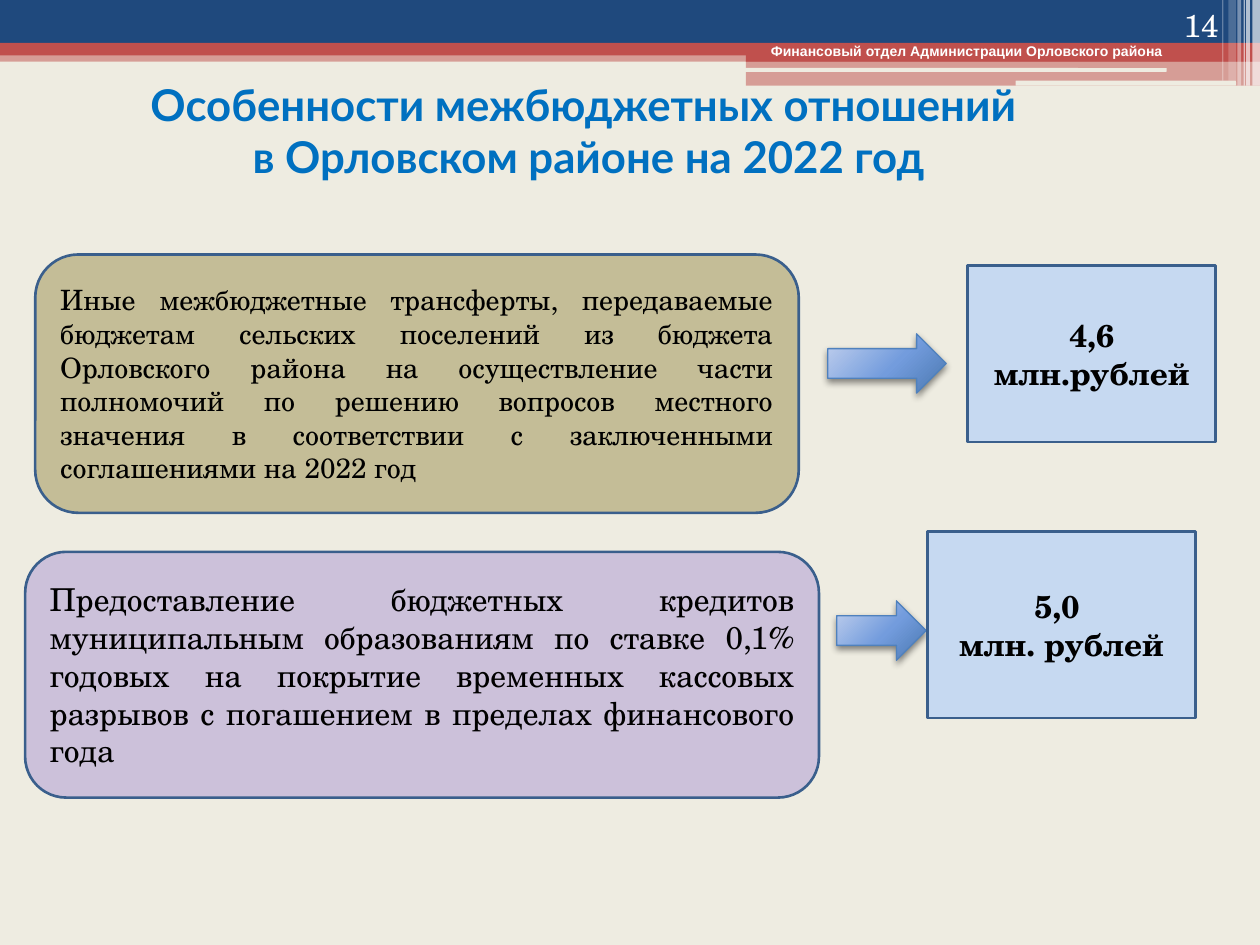
from lxml import etree
from pptx import Presentation
from pptx.dml.color import RGBColor
from pptx.enum.shapes import MSO_SHAPE
from pptx.enum.text import MSO_ANCHOR, MSO_AUTO_SIZE, PP_ALIGN
from pptx.oxml import parse_xml
from pptx.oxml.ns import nsdecls, qn
from pptx.util import Pt

PX = 9144  # 100 px to the inch
RECT, ROUND, ARROW = MSO_SHAPE.RECTANGLE, MSO_SHAPE.ROUNDED_RECTANGLE, MSO_SHAPE.RIGHT_ARROW
LEFT, CENTER, RIGHT, JUSTIFY = PP_ALIGN.LEFT, PP_ALIGN.CENTER, PP_ALIGN.RIGHT, PP_ALIGN.JUSTIFY
TOP, MIDDLE, BOTTOM = MSO_ANCHOR.TOP, MSO_ANCHOR.MIDDLE, MSO_ANCHOR.BOTTOM

CREAM = RGBColor(0xEE, 0xEC, 0xE1)
NAVY = RGBColor(0x1F, 0x49, 0x7D)
RED = RGBColor(0xC0, 0x50, 0x4D)
WHITE = RGBColor(0xFF, 0xFF, 0xFF)
BLACK = RGBColor(0, 0, 0)
TITLE_BLUE = RGBColor(0x00, 0x70, 0xC0)
PALE_BLUE = RGBColor(0xC6, 0xD9, 0xF1)
LILAC = RGBColor(0xCC, 0xC1, 0xDA)
KHAKI = RGBColor(0xC4, 0xBD, 0x97)
BORDER = RGBColor(0x3A, 0x5F, 0x8C)
ARROW_LINE = RGBColor(0x4F, 0x81, 0xBD)
SERIF = "TeX Gyre Schola"

GRADIENT = f"""<a:gradFill {nsdecls('a')} rotWithShape="1"><a:gsLst>
<a:gs pos="0"><a:srgbClr val="C4D2EE"/></a:gs>
<a:gs pos="55000"><a:srgbClr val="739CDD"/></a:gs>
<a:gs pos="100000"><a:srgbClr val="4A78B0"/></a:gs></a:gsLst>
<a:path path="circle"><a:fillToRect l="-40000" t="-90000" r="140000" b="190000"/></a:path>
</a:gradFill>"""
SHADOW = f"""<a:effectLst {nsdecls('a')}>
<a:outerShdw blurRad="50800" dist="25400" dir="5400000" rotWithShape="0">
<a:srgbClr val="000000"><a:alpha val="45000"/></a:srgbClr></a:outerShdw></a:effectLst>"""


def add_box(kind, box, fill, line=None, width=1.5, alpha=100):
    sp = s.shapes.add_shape(kind, *(v * PX for v in box))
    sp.shadow.inherit = False
    sp.fill.solid()
    sp.fill.fore_color.rgb = fill
    if alpha < 100:
        color = sp._element.spPr.find(".//" + qn("a:srgbClr"))
        etree.SubElement(color, qn("a:alpha")).set("val", str(alpha * 1000))
    if line is None:
        sp.line.fill.background()
    else:
        sp.line.color.rgb = line
        sp.line.width = Pt(width)
    return sp


def write(sp, text, size, color, align, anchor, font=SERIF, bold=False):
    tf = sp.text_frame
    tf.text = text
    tf.word_wrap = True
    tf.auto_size = MSO_AUTO_SIZE.NONE
    tf.vertical_anchor = anchor
    for p in tf.paragraphs:
        p.alignment = align
        for r in p.runs:
            r.font.name = font
            r.font.size = Pt(size)
            r.font.bold = bold
            r.font.color.rgb = color


prs = Presentation()
prs.slide_width, prs.slide_height = 1000 * PX, 750 * PX
s = prs.slides.add_slide(prs.slide_layouts[5])
s.background.fill.solid()
s.background.fill.fore_color.rgb = CREAM

# Header bands
for kind, box, fill, alpha in [
    (RECT, (0, 40, 1000, 9), RED, 50),
    (RECT, (0, 0, 1000, 34), NAVY, 100),
    (RECT, (0, 34, 1000, 10), RED, 100),
    (RECT, (592, 39, 408, 10), RED, 100),
    (RECT, (592, 48, 408, 20), RED, 50),
    (ROUND, (591, 54, 335, 3), CREAM, 100),
    (ROUND, (806, 64, 175, 4), CREAM, 100),
]:
    add_box(kind, box, fill, alpha=alpha)

# Light stripes at the right edge
for left, width, height, alpha in [
    (994, 6, 68, 65), (989, 3, 68, 65), (987, 1, 68, 60),
    (982, 3, 68, 40), (975, 6, 64, 20), (970, 1, 64, 30),
]:
    add_box(RECT, (left, 0, width, height), WHITE, alpha=alpha)

# Header texts
for box, text, size, align, anchor, font, bold in [
    ((602, 29, 367, 24), "Финансовый отдел Администрации Орловского района",
     8, LEFT, TOP, "Arial", True),
    ((894, 0, 83, 40), "14", 18, RIGHT, BOTTOM, SERIF, False),
]:
    tb = s.shapes.add_textbox(*(v * PX for v in box))
    write(tb, text, size, WHITE, align, anchor, font, bold)

title = s.shapes.title
title.left, title.top, title.width, title.height = (v * PX for v in (0, 52, 925, 102))
write(title, "Особенности межбюджетных отношений \vв Орловском районе на 2022 год",
      25, TITLE_BLUE, CENTER, MIDDLE, "Lato", True)
title.text_frame.paragraphs[0]._p.get_or_add_pPr().set("marL", str(9 * PX))

# Each row: description, arrow, amount
rows = [
    ((28, 202, 606, 205), KHAKI, 16,
     "Иные межбюджетные трансферты, передаваемые бюджетам сельских поселений "
     "из бюджета Орловского района на осуществление части полномочий по решению "
     "вопросов местного значения в соответствии с заключенными соглашениями на 2022 год",
     (657, 265, 94, 47), (768, 211, 197, 140), "4,6\nмлн.рублей"),
    ((20, 438, 630, 195), LILAC, 18,
     "Предоставление бюджетных кредитов муниципальным образованиям по ставке 0,1% "
     "годовых на покрытие временных кассовых разрывов с погашением в пределах "
     "финансового года",
     (664, 477, 71, 47), (736, 422, 213, 148), "5,0 \nмлн. рублей"),
]
for text_box, fill, size, text, arrow_box, amount_box, amount in rows:
    sp = add_box(ROUND, text_box, fill, BORDER)
    write(sp, text, size, BLACK, JUSTIFY, MIDDLE)

    arrow = add_box(ARROW, arrow_box, PALE_BLUE, ARROW_LINE, 0.75)
    spPr = arrow._element.spPr
    spPr.replace(spPr.find(qn("a:solidFill")), parse_xml(GRADIENT))
    spPr.replace(spPr.find(qn("a:effectLst")), parse_xml(SHADOW))

    sp = add_box(RECT, amount_box, PALE_BLUE, BORDER)
    write(sp, amount, 18, BLACK, CENTER, MIDDLE, bold=True)

prs.save("out.pptx")
